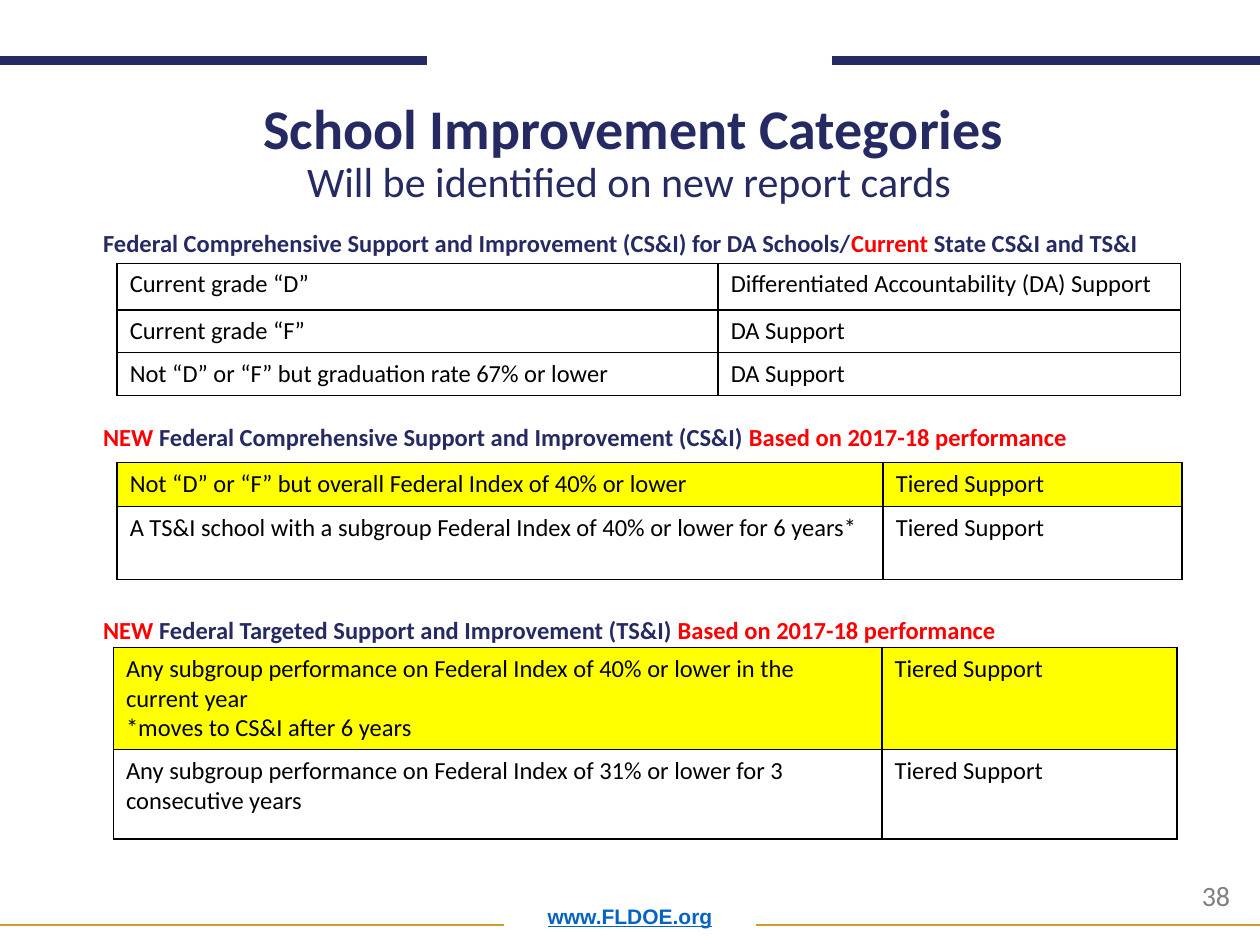
from typing import NamedTuple

from lxml.etree import SubElement
from pptx import Presentation
from pptx.dml.color import RGBColor
from pptx.enum.shapes import MSO_CONNECTOR as Link
from pptx.enum.text import MSO_ANCHOR as Anchor, MSO_AUTO_SIZE as Fit, PP_ALIGN as Align
from pptx.oxml.ns import qn
from pptx.util import Inches, Pt

HEX = {"navy": "262A63", "red": "FF0000", "gold": "CD9D2C", "black": "000000",
       "yellow": "FFFF00", "blue": "0563C1", "gray": "7F7F7F"}
FONT = "Calibri"


class Rule(NamedTuple):
    x1: float
    x2: float
    y: float
    color: str
    width: float


class Row(NamedTuple):
    height: float
    left: str
    right: str
    fill: str = ""


class Grid(NamedTuple):
    x: float
    y: float
    cols: tuple[float, float]
    rows: list[Row]


class Part(NamedTuple):
    text: str
    color: str


def rgb(name: str) -> RGBColor:
    return RGBColor.from_string(HEX[name])


def style(para, size: float, color: str, bold: bool = False, face: str = FONT) -> None:
    font = para.font
    font.name, font.size, font.bold = face, Pt(size), bold
    font.color.rgb = rgb(color)


def add_rule(slide, rule: Rule) -> None:
    y = Inches(rule.y)
    line = slide.shapes.add_connector(Link.STRAIGHT, Inches(rule.x1), y, Inches(rule.x2), y)
    line.line.color.rgb = rgb(rule.color)
    line.line.width = Pt(rule.width)
    SubElement(line._element.spPr, qn("a:effectLst"))


def add_box(slide, x: float, y: float, w: float, h: float):
    frame = slide.shapes.add_textbox(Inches(x), Inches(y), Inches(w), Inches(h)).text_frame
    frame.word_wrap = True
    return frame


def add_head(slide, y: float, parts: list[Part]) -> None:
    para = add_box(slide, 0.72, y, 9.24, 0.32).paragraphs[0]
    para.line_spacing = 0.9
    style(para, 14, "navy", bold=True)
    for part in parts:
        run = para.add_run()
        run.text = part.text
        run.font.color.rgb = rgb(part.color)


def add_edges(cell) -> None:
    props = cell._tc.get_or_add_tcPr()
    for spot, side in enumerate(("lnL", "lnR", "lnT", "lnB")):
        edge = props.makeelement(qn(f"a:{side}"), {"w": str(Pt(1))})
        props.insert(spot, edge)
        fill = SubElement(edge, qn("a:solidFill"))
        SubElement(fill, qn("a:srgbClr"), val=HEX["black"])


def add_grid(slide, grid: Grid) -> None:
    high = sum(row.height for row in grid.rows)
    table = slide.shapes.add_table(len(grid.rows), 2, Inches(grid.x), Inches(grid.y),
                                   Inches(sum(grid.cols)), Inches(high)).table
    table.first_row = table.horz_banding = False
    for col, width in zip(table.columns, grid.cols):
        col.width = Inches(width)
    for line, row in zip(table.rows, grid.rows):
        line.height = Inches(row.height)
        for cell, text in zip(line.cells, (row.left, row.right)):
            cell.text = text
            for para in cell.text_frame.paragraphs:
                style(para, 14, "black")
            if row.fill:
                cell.fill.solid()
                cell.fill.fore_color.rgb = rgb(row.fill)
            else:
                cell.fill.background()
            add_edges(cell)


RULES = [
    Rule(0, 3.39, 0.48, "navy", 5),
    Rule(6.6, 10, 0.48, "navy", 5),
    Rule(0, 4, 7.34, "gold", 1),
    Rule(6, 10, 7.34, "gold", 1),
]
BASIS = Part("Based on 2017-18 performance", "red")
HEADS = [
    [Part("Federal Comprehensive Support and Improvement (CS&I) for DA Schools/", "navy"),
     Part("Current", "red"), Part(" State CS&I and TS&I", "navy")],
    [Part("NEW ", "red"),
     Part("Federal Comprehensive Support and Improvement (CS&I) ", "navy"), BASIS],
    [Part("NEW ", "red"),
     Part("Federal Targeted Support and Improvement (TS&I) ", "navy"), BASIS],
]
TIER = "Tiered Support"
GRIDS = [
    Grid(0.93, 2.09, (4.77, 3.67), [
        Row(0.37, "Current grade “D”", "Differentiated Accountability (DA) Support"),
        Row(0.34, "Current grade “F”", "DA Support"),
        Row(0.34, "Not “D” or “F” but graduation rate 67% or lower", "DA Support"),
    ]),
    Grid(0.93, 3.67, (6.08, 2.37), [
        Row(0.35, "Not “D” or “F” but overall Federal Index of 40% or lower", TIER, "yellow"),
        Row(0.58, "A TS&I school with a subgroup Federal Index of 40% or lower for 6 years*", TIER),
    ]),
    Grid(0.9, 5.14, (6.1, 2.34), [
        Row(0.81, "Any subgroup performance on Federal Index of 40% or lower in the current year\n"
            "*moves to CS&I after 6 years", TIER, "yellow"),
        Row(0.71, "Any subgroup performance on Federal Index of 31% or lower for 3 "
            "consecutive years", TIER),
    ]),
]


def main() -> None:
    deck = Presentation()
    deck.slide_width, deck.slide_height = Inches(10), Inches(7.5)
    slide = deck.slides.add_slide(deck.slide_layouts[5])

    # Frame lines
    for rule in RULES:
        add_rule(slide, rule)

    # Title
    title = slide.shapes.title
    title.left, title.top = Inches(0.72), Inches(0.82)
    title.width, title.height = Inches(8.62), Inches(0.87)
    frame = title.text_frame
    frame.text = "School Improvement Categories\nWill be identified on new report cards "
    frame.auto_size, frame.vertical_anchor = Fit.NONE, Anchor.BOTTOM
    for para, size, bold in zip(frame.paragraphs, (32, 24), (True, False)):
        para.alignment, para.line_spacing = Align.CENTER, 0.9
        style(para, size, "navy", bold)

    # Headings, evenly spaced, each with its table
    for step, (head, grid) in enumerate(zip(HEADS, GRIDS)):
        add_head(slide, 1.79 + 1.535 * step, head)
        add_grid(slide, grid)

    # Footer
    foot = add_box(slide, 0.69, 7, 8.62, 0.42)
    foot.vertical_anchor = Anchor.BOTTOM
    para = foot.paragraphs[0]
    para.text, para.alignment, para.line_spacing = "www.FLDOE.org", Align.CENTER, 0.9
    style(para, 12, "blue", bold=True, face="Arial")
    para.font.underline = True

    # Page number
    para = add_box(slide, 9.44, 6.92, 0.52, 0.37).paragraphs[0]
    para.text = "38"
    style(para, 16, "gray")

    deck.save("out.pptx")


if __name__ == "__main__":
    main()
